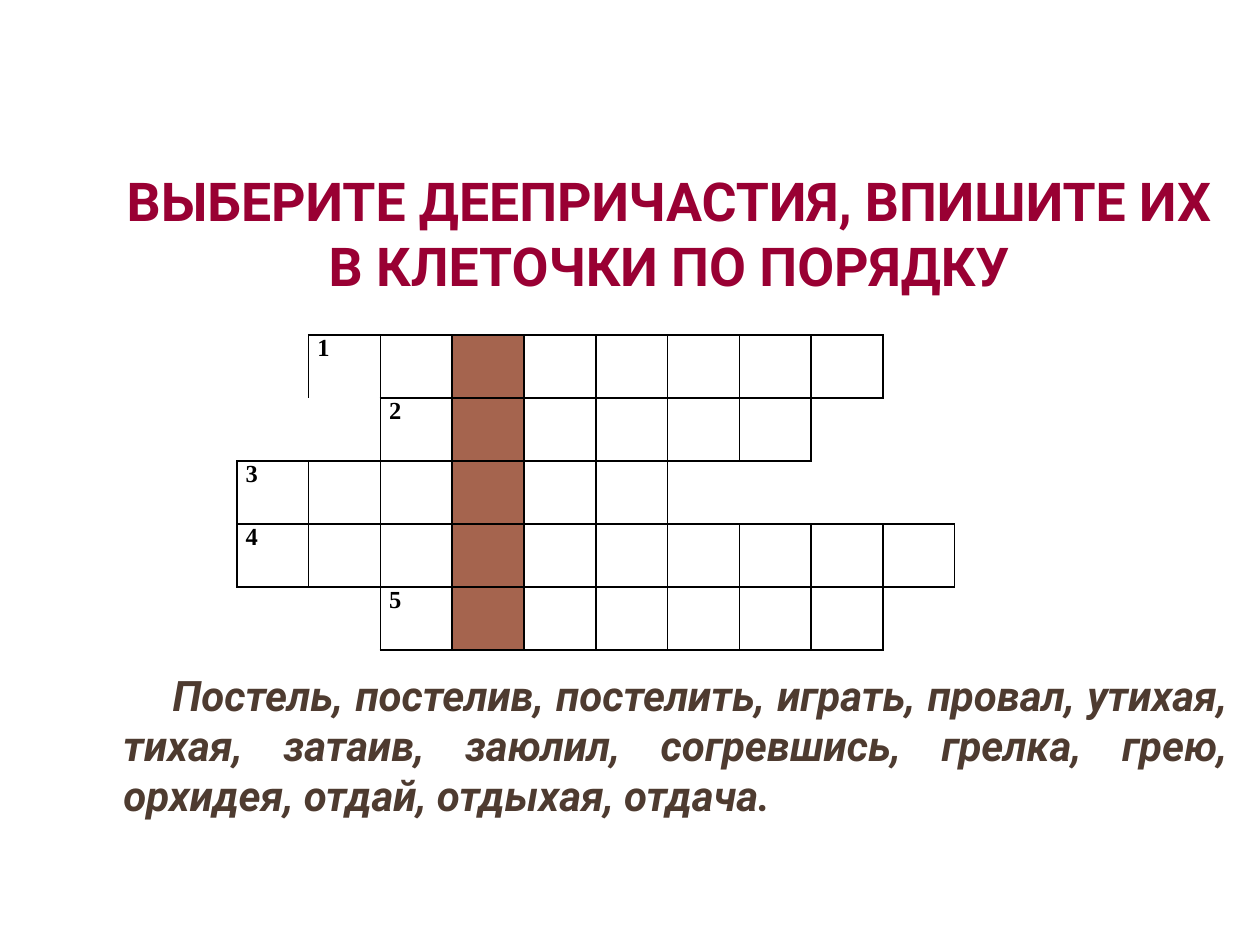
from pptx import Presentation
from pptx.dml.color import RGBColor
from pptx.enum.text import MSO_ANCHOR, PP_ALIGN
from pptx.oxml import parse_xml
from pptx.oxml.ns import nsdecls
from pptx.util import Emu, Inches, Pt

MID, TOP = MSO_ANCHOR.MIDDLE, MSO_ANCHOR.TOP
CENTER, JUSTIFY = PP_ALIGN.CENTER, PP_ALIGN.JUSTIFY

TITLE = "ВЫБЕРИТЕ ДЕЕПРИЧАСТИЯ, ВПИШИТЕ ИХ В КЛЕТОЧКИ ПО ПОРЯДКУ"
WORDS = ("Постель, постелив, постелить, играть, провал, утихая, тихая, "
         "затаив, заюлил, согревшись, грелка, грею, орхидея, отдай, "
         "отдыхая, отдача.")
# First and last column of each answer
ROWS = [(1, 8), (2, 7), (0, 5), (0, 9), (2, 8)]
COLS, KEY = 10, 3
JOINED = [(1, 0), (2, 6), (4, 0)]   # blank cells joined to the next one
OPEN = {(0, 1, "B")}                # sides left without a line
CELL_W, CELL_H = 0.57, 0.5
NO_STYLE = "{2D5ABB26-0587-4C30-8999-92F81FD0307C}"

HEAD = dict(name="Roboto", size=Pt(30.6), bold=True)
LIST = dict(name="Roboto", size=Pt(24), bold=True, italic=True)
NUM = dict(name="Times New Roman", size=Pt(14), bold=True)


def color(hex):
    return RGBColor.from_string(hex)


def style(thing, vals):
    for key, val in vals.items():
        setattr(thing, key, val)


def write(frame, text, font, hue, align=None):
    par = frame.paragraphs[0]
    par.alignment = align
    run = par.add_run()
    run.text = text
    style(run.font, font)
    run.font.color.rgb = color(hue)
    return par


def place(shape, *box):
    style(shape, dict(zip(("left", "top", "width", "height"),
                          map(Inches, box))))


def used(row, col):
    return 0 <= row < len(ROWS) and ROWS[row][0] <= col <= ROWS[row][1]


def rule(cell, row, col):
    """Line each side that borders an answer square."""
    span = cell.span_width if cell.is_merge_origin else 1
    near = {"L": (row, col - 1), "R": (row, col + span),
            "T": (row - 1, col), "B": (row + 1, col)}
    props = cell._tc.get_or_add_tcPr()
    for i, (side, spot) in enumerate(near.items()):
        drawn = ((used(row, col) or used(*spot))
                 and (row, col, side) not in OPEN)
        fill = ('<a:solidFill><a:srgbClr val="000000"/></a:solidFill>'
                if drawn else "<a:noFill/>")
        props.insert(i, parse_xml(
            f'<a:ln{side} {nsdecls("a")} w="{Pt(1)}">{fill}</a:ln{side}>'))


def grid(slide):
    frame = slide.shapes.add_table(
        len(ROWS), COLS, Inches(1.88), Inches(2.66),
        Inches(COLS * CELL_W), Inches(len(ROWS) * CELL_H))
    table = frame.table
    style(table, dict(first_row=False, horz_banding=False))
    table._tbl.tblPr.find("{*}tableStyleId").text = NO_STYLE
    for col in table.columns:
        col.width = Inches(CELL_W)
    for row in table.rows:
        row.height = Inches(CELL_H)
    for row, col in JOINED:
        table.cell(row, col).merge(table.cell(row, col + 1))

    pad = dict(margin_left=Inches(0.07), margin_right=Inches(0.07),
               margin_top=Emu(0), margin_bottom=Emu(0))
    for row, (first, _) in enumerate(ROWS):
        for col in range(COLS):
            cell = table.cell(row, col)
            if cell.is_spanned:
                continue
            if col == KEY:
                cell.fill.solid()
                cell.fill.fore_color.rgb = color("A5644E")
            else:
                cell.fill.background()
            if col == first:
                style(cell, pad)
                write(cell.text_frame, str(row + 1), NUM, "000000")
            rule(cell, row, col)


def main():
    deck = Presentation()
    style(deck, dict(slide_width=Inches(10), slide_height=Inches(7.5)))
    slide = deck.slides.add_slide(deck.slide_layouts[5])

    grid(slide)

    title = slide.shapes.title
    place(title, 0.78, 1.22, 9.06, 1.25)
    title.text_frame.vertical_anchor = MID
    write(title.text_frame, TITLE, HEAD, "990033", CENTER)

    body = slide.shapes.add_textbox(0, 0, 0, 0)
    place(body, 0.86, 5.31, 8.98, 1.95)
    style(body.text_frame, dict(
        word_wrap=True, vertical_anchor=TOP, margin_left=Inches(0.12),
        margin_right=Inches(0.1), margin_top=0, margin_bottom=Inches(0.05)))
    par = write(body.text_frame, WORDS, LIST, "4E3B30", JUSTIFY)
    par.space_before = Pt(4.8)
    par._p.get_or_add_pPr().set("indent", str(Inches(0.39)))

    deck.save("out.pptx")


if __name__ == "__main__":
    main()
